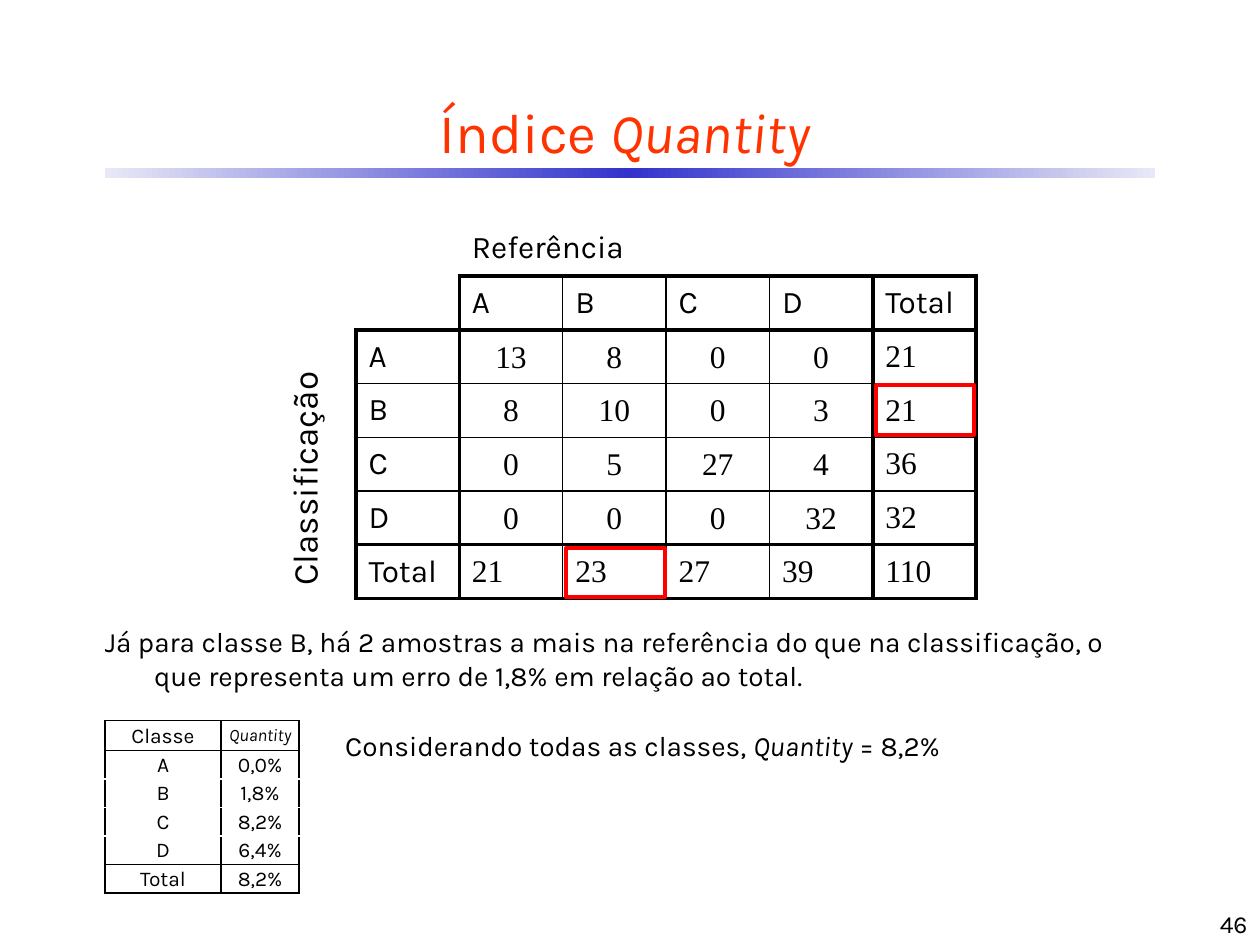
from lxml.etree import SubElement
from pptx import Presentation
from pptx.dml.color import RGBColor
from pptx.enum.shapes import MSO_SHAPE
from pptx.enum.text import MSO_ANCHOR, PP_ALIGN
from pptx.oxml.ns import qn
from pptx.util import Inches, Pt

BLACK = RGBColor(0x00, 0x00, 0x00)
WHITE = RGBColor(0xFF, 0xFF, 0xFF)
RED = RGBColor(0xFF, 0x00, 0x00)
ORANGE = RGBColor(0xFF, 0x33, 0x00)
BLUE = RGBColor(0x33, 0x33, 0xCC)
PALE_BLUE = RGBColor(0xE8, 0xE8, 0xF6)

COLUMNS, ROWS = 120, 90
THIN, THICK = Pt(1), Pt(2.25)
SANS, SERIF = "Karla", "Times New Roman"
NO_STYLE = "{2D5ABB26-0587-4C30-8999-92F81FD0307C}"


class SlideBuilder:
    def __init__(self, presentation):
        self.width = presentation.slide_width
        self.height = presentation.slide_height
        self.slide = presentation.slides.add_slide(presentation.slide_layouts[6])

    def across(self, columns):
        return round(self.width * columns / COLUMNS)

    def down(self, rows):
        return round(self.height * rows / ROWS)

    def area(self, left, top, width, height):
        return self.across(left), self.down(top), self.across(width), self.down(height)

    def fill_paragraph(self, paragraph, text, size, font=SANS, color=BLACK,
                       align=PP_ALIGN.LEFT, italic=None):
        paragraph.alignment = align
        before, found, after = text.partition(italic) if italic else (text, "", "")
        paragraph.text = before
        for part in filter(None, (found, after)):
            paragraph.add_run().text = part
        for run in paragraph.runs:
            run.font.size = Pt(size)
            run.font.name = font
            run.font.color.rgb = color
            run.font.italic = run.text == italic

    def text(self, area, text, size, anchor=MSO_ANCHOR.TOP, hanging=0, **style):
        frame = self.slide.shapes.add_textbox(*self.area(*area)).text_frame
        frame.word_wrap = True
        frame.vertical_anchor = anchor
        paragraph = frame.paragraphs[0]
        self.fill_paragraph(paragraph, text, size, **style)
        if hanging:
            properties = paragraph._p.get_or_add_pPr()
            properties.set("marL", str(self.across(hanging)))
            properties.set("indent", str(-self.across(hanging)))

    def rectangle(self, area):
        shape = self.slide.shapes.add_shape(MSO_SHAPE.RECTANGLE, *self.area(*area))
        shape.shadow.inherit = False
        return shape

    def highlight(self, area):
        shape = self.rectangle(area)
        shape.fill.background()
        shape.line.color.rgb = RED
        shape.line.width = THICK

    def gradient_bar(self, area, colors):
        shape = self.rectangle(area)
        shape.line.fill.background()
        shape.fill.gradient()
        shape.fill.gradient_angle = 0
        stops = next(shape.element.iter(qn("a:gsLst")))
        for stop in list(stops):
            stops.remove(stop)
        for index, color in enumerate(colors):
            position = 100000 * index // (len(colors) - 1)
            stop = SubElement(stops, qn("a:gs"), pos=str(position))
            SubElement(stop, qn("a:srgbClr"), val=str(color))

    def table(self, left, top, widths, heights):
        area = self.area(left, top, sum(widths), sum(heights))
        frame = self.slide.shapes.add_table(len(heights), len(widths), *area)
        next(frame.element.iter(qn("a:tableStyleId"))).text = NO_STYLE
        for column, width in zip(frame.table.columns, widths):
            column.width = self.across(width)
        for row, height in zip(frame.table.rows, heights):
            row.height = self.down(height)
        return frame.table

    def cell(self, cell, text, size, tight=False, **style):
        cell.vertical_anchor = MSO_ANCHOR.MIDDLE
        if tight:
            cell.margin_left = cell.margin_right = cell.margin_top = Inches(0.01)
            cell.margin_bottom = 0
            style["align"] = PP_ALIGN.CENTER
        self.fill_paragraph(cell.text_frame.paragraphs[0], text, size, **style)

    def borders(self, cell, **edges):
        properties = cell._tc.get_or_add_tcPr()
        for side in "LRTB":
            width, color = edges[side]
            line = SubElement(properties, qn(f"a:ln{side}"), w=str(width))
            fill = SubElement(line, qn("a:solidFill"))
            SubElement(fill, qn("a:srgbClr"), val=str(color))
        cell.fill.background()

    def confusion_matrix(self, left, top, labels, values):
        last = len(labels) + 1
        table = self.table(left, top, [5.9] + [9.85] * last, [5.3] + [5.12] * last)
        table.cell(0, 2).merge(table.cell(0, last))
        self.cell(table.cell(0, 2), "Referência", 18)
        table.cell(2, 0).merge(table.cell(last, 0))
        side = table.cell(2, 0)
        self.cell(side, "Classificação", 20)
        side.text_frame.paragraphs[0].line_spacing = Pt(15)
        side._tc.get_or_add_tcPr().set("vert", "vert270")

        for index, label in enumerate(labels, 2):
            self.cell(table.cell(1, index), label, 18)
            self.cell(table.cell(index, 1), label, 18)
        for row, numbers in enumerate(values, 2):
            for column, number in enumerate(numbers, 2):
                inner = row < last and column < last
                self.cell(table.cell(row, column), str(number), 18, tight=inner, font=SERIF)

        def edge(index):
            return (THICK if index in (1, 2, last, last + 1) else THIN), BLACK

        for row in range(1, last + 1):
            for column in range(1, last + 1):
                if row + column > 2:
                    self.borders(table.cell(row, column), L=edge(column), R=edge(column + 1),
                                 T=edge(row), B=edge(row + 1))

    def summary_table(self, left, top, records):
        last = len(records) - 1
        table = self.table(left, top, [11.05, 7.45], [2.9] + [2.71] * last)

        def edge(index):
            return THIN, WHITE if 1 < index < last else BLACK

        for row, record in enumerate(records):
            for column, text in enumerate(record):
                cell = table.cell(row, column)
                is_name = text == "Quantity"
                self.cell(cell, text, 10 if is_name else 12, tight=True,
                          italic=text if is_name else None)
                self.borders(cell, L=(THIN, BLACK), R=(THIN, BLACK), T=edge(row), B=edge(row + 1))


def main():
    presentation = Presentation()
    presentation.slide_width = Inches(10)
    presentation.slide_height = Inches(7.5)
    builder = SlideBuilder(presentation)

    builder.gradient_bar((10, 16, 100, 1), (PALE_BLUE, BLUE, PALE_BLUE))
    builder.text((4, 8, 111, 9), "Índice Quantity", 32, anchor=MSO_ANCHOR.MIDDLE,
                 color=ORANGE, align=PP_ALIGN.CENTER, italic="Quantity")

    counts = [[13, 8, 0, 0], [8, 10, 0, 3], [0, 5, 27, 4], [0, 0, 0, 32]]
    values = [row + [sum(row)] for row in counts]
    values.append([sum(column) for column in zip(*values)])
    builder.confusion_matrix(28, 21, ["A", "B", "C", "D", "Total"], values)

    builder.text((8.8, 58.9, 102, 7.7),
                 "Já para classe B, há 2 amostras a mais na referência do que na classificação, "
                 "o que representa um erro de 1,8% em relação ao total.", 16, hanging=4.7)
    for left, top in ((83.4, 36.7), (53.9, 52.2)):
        builder.highlight((left, top, 9.4, 4.7))
    builder.text((31.7, 68.8, 63.4, 4.4), "Considerando todas as classes, Quantity = 8,2%", 16,
                 hanging=4.7, italic="Quantity")

    builder.summary_table(10, 68.6, [
        ("Classe", "Quantity"), ("A", "0,0%"), ("B", "1,8%"),
        ("C", "8,2%"), ("D", "6,4%"), ("Total", "8,2%"),
    ])
    builder.text((95, 84, 25, 6), "46", 14, anchor=MSO_ANCHOR.BOTTOM, align=PP_ALIGN.RIGHT)
    presentation.save("out.pptx")


if __name__ == "__main__":
    main()
